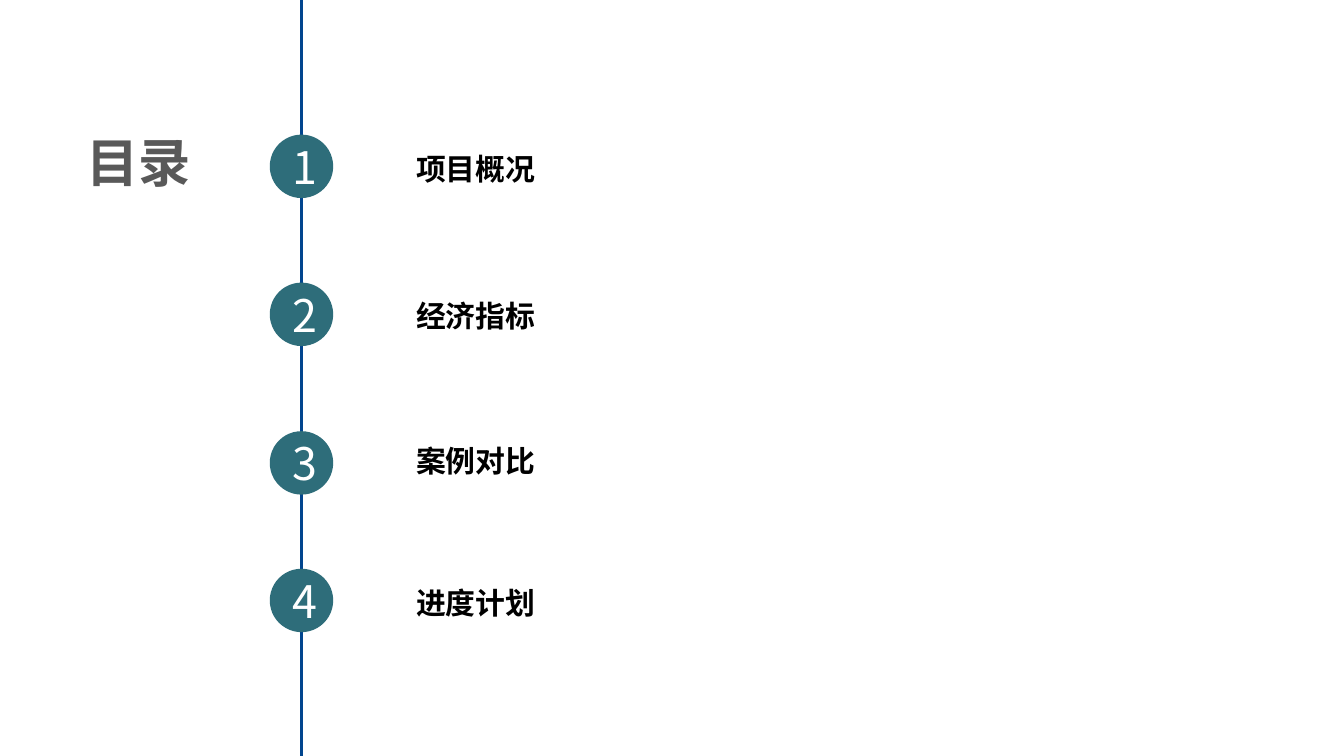
from lxml import etree
from pptx import Presentation
from pptx import util as u
from pptx.dml.color import RGBColor
from pptx.enum import shapes, text
from pptx.oxml.ns import qn

FONT = "Noto Sans CJK SC"
WIDTH, HEIGHT = 720, 405
CIRCLE = 34
SECTIONS = [
    ("项目概况", 72.1, 67.7),
    ("经济指标", 151.4, 146.2),
    ("案例对比", 231, 223.9),
    ("进度计划", 304.7, 300.2),
]


def color(value):
    return RGBColor.from_string(value)


def points(*values):
    return [u.Pt(value) for value in values]


def write(shape, content, size, fill, bold=False, align=text.PP_ALIGN.LEFT,
          anchor=text.MSO_ANCHOR.TOP, spacing=None, wrap=True):
    frame = shape.text_frame
    frame.word_wrap = wrap
    frame.vertical_anchor = anchor
    paragraph = frame.paragraphs[0]
    paragraph.alignment = align
    paragraph.line_spacing = spacing
    run = paragraph.add_run()
    run.text = content
    run.font.name = FONT
    run.font.size = u.Pt(size)
    run.font.bold = bold
    run.font.color.rgb = color(fill)
    east_asian = etree.Element(qn("a:ea"), typeface=FONT)
    run.font._element.find(qn("a:latin")).addnext(east_asian)


def add_heading(slide, left, top, width, height):
    title = slide.shapes.title
    title.left, title.top, title.width, title.height = points(left, top, width, height)
    write(title, "目录", 28, "595959", bold=True, wrap=False)
    title.text_frame.auto_size = text.MSO_AUTO_SIZE.SHAPE_TO_FIT_TEXT


def add_timeline(slide, x, top, height):
    line = slide.shapes.add_connector(
        shapes.MSO_CONNECTOR.STRAIGHT, *points(x, top, x, top + height))
    line.line.color.rgb = color("01458E")
    line.line.width = u.Pt(1.25)
    etree.SubElement(line._element.spPr, qn("a:effectLst"))


def add_section(slide, number, label, left, circle_top, label_top):
    circle = slide.shapes.add_shape(
        shapes.MSO_SHAPE.OVAL, *points(left, circle_top, CIRCLE, CIRCLE))
    circle.shadow.inherit = False
    circle.fill.solid()
    circle.fill.fore_color.rgb = color("2E6D7A")
    circle.line.fill.background()
    write(circle, str(number), 24, "FFFFFF", align=text.PP_ALIGN.CENTER,
          anchor=text.MSO_ANCHOR.MIDDLE)
    box = slide.shapes.add_textbox(*points(left + 71.4, label_top, 280, 36))
    write(box, label, 16, "000000", bold=True, spacing=1.5)
    box.text_frame.auto_size = text.MSO_AUTO_SIZE.SHAPE_TO_FIT_TEXT


def main():
    presentation = Presentation()
    presentation.slide_width, presentation.slide_height = points(WIDTH, HEIGHT)
    slide = presentation.slides.add_slide(presentation.slide_layouts[5])
    axis = 161.5
    add_heading(slide, 39.3, 66.2, 71.3, 41)
    add_timeline(slide, axis, 0, HEIGHT)
    for number, (label, circle_top, label_top) in enumerate(SECTIONS, start=1):
        add_section(slide, number, label, axis - CIRCLE / 2, circle_top, label_top)
    presentation.save("out.pptx")


if __name__ == "__main__":
    main()
